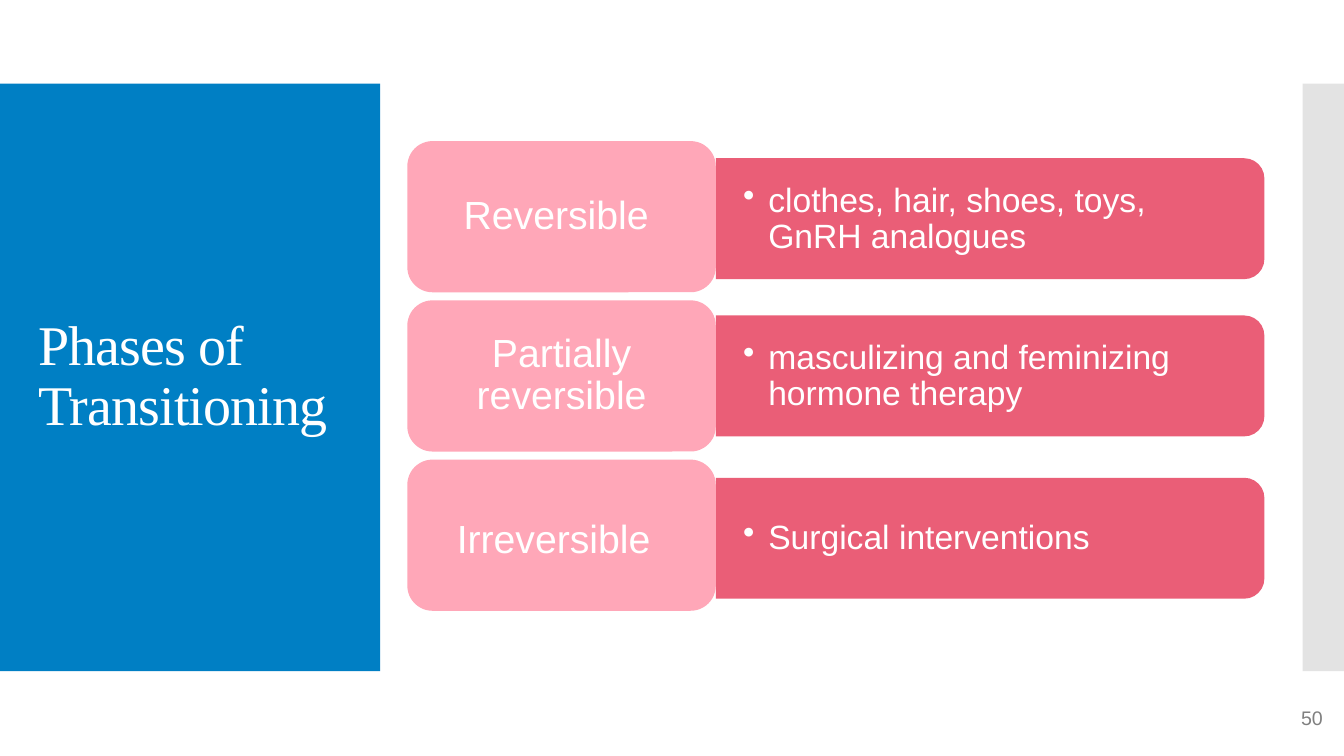
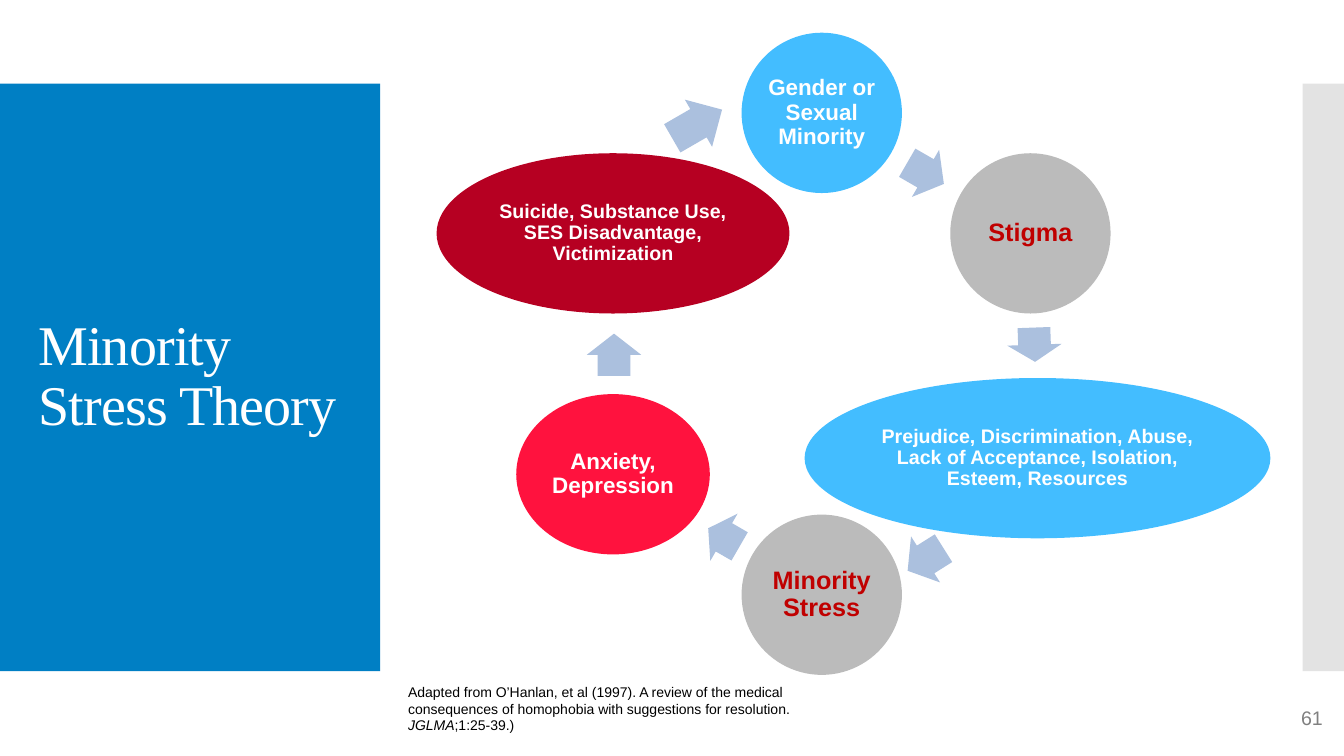
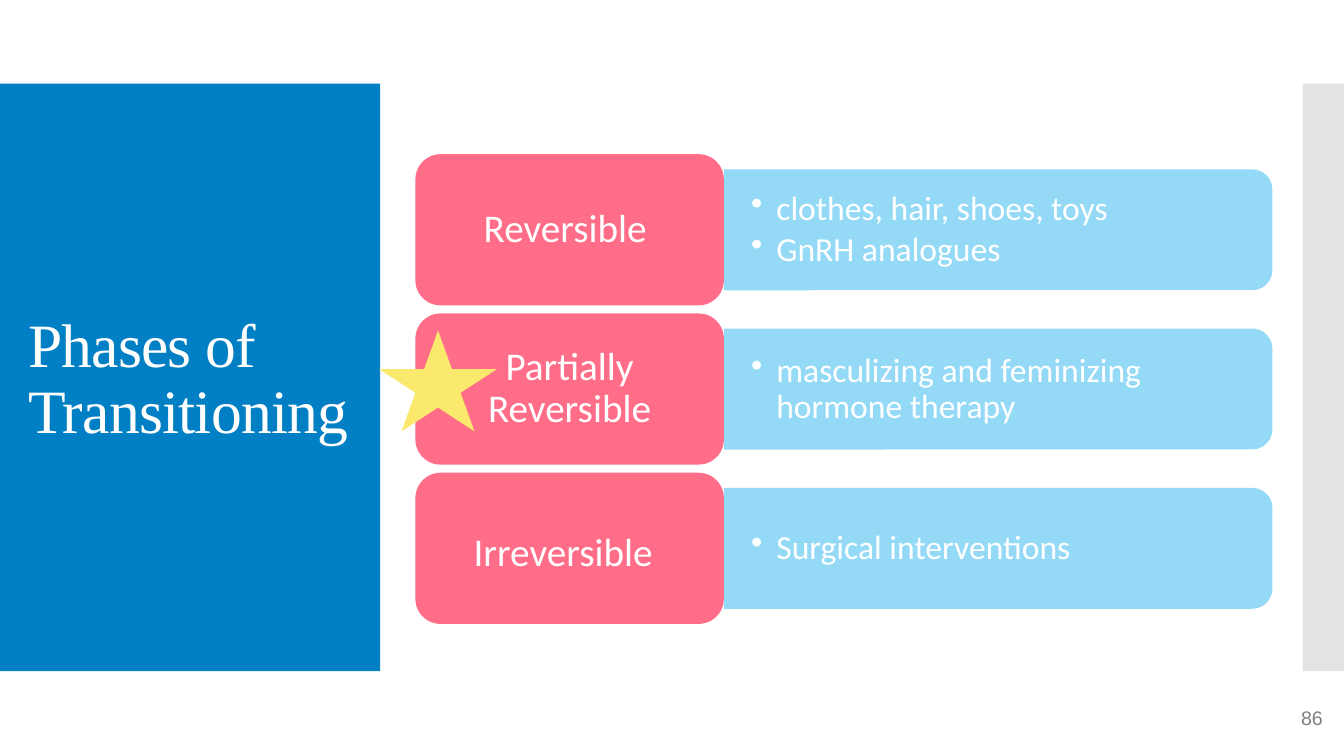
from math import cos, radians, sin

from lxml import etree
from pptx import Presentation
from pptx.dml.color import RGBColor
from pptx.enum.shapes import MSO_SHAPE
from pptx.enum.text import MSO_ANCHOR, MSO_AUTO_SIZE, PP_ALIGN
from pptx.oxml.ns import qn
from pptx.util import Inches, Pt

RECT, ROUNDED = MSO_SHAPE.RECTANGLE, MSO_SHAPE.ROUNDED_RECTANGLE
TAB, OVAL = MSO_SHAPE.ROUND_2_SAME_RECTANGLE, MSO_SHAPE.OVAL
ARROW, STAR = MSO_SHAPE.RIGHT_ARROW, MSO_SHAPE.STAR_5_POINT
LEFT, CENTER, RIGHT = PP_ALIGN.LEFT, PP_ALIGN.CENTER, PP_ALIGN.RIGHT
TOP, MIDDLE = MSO_ANCHOR.TOP, MSO_ANCHOR.MIDDLE
NO_AUTOFIT = MSO_AUTO_SIZE.NONE

COLORS = {
    "white": "FFFFFF", "black": "000000", "number": "808080",
    "band": "007FC4", "edge": "C8C8C8",
    "pink": "FFA7B8", "rose": "E84D69", "coral": "FF6D88", "pale_blue": "89D6F7",
    "star": "FBE96E", "sky": "43BDFF", "gray": "BBBBBB", "dark_red": "C00000",
    "red": "FF123E", "crimson": "B60022", "arrow": "ABC0DE",
}


def add_block(shapes, kind, box, color, alpha=None, rotation=0):
    block = shapes.add_shape(kind, *[Inches(v) for v in box])
    block.shadow.inherit = False
    block.line.fill.background()
    block.fill.solid()
    block.fill.fore_color.rgb = RGBColor.from_string(COLORS[color])
    block.rotation = rotation
    if alpha:
        rgb = block.element.spPr.find(qn("a:solidFill"))[0]
        etree.SubElement(rgb, qn("a:alpha"), val=str(alpha * 1000))
    return block


def write_text(shape, paragraphs, size, color="white", font="Arial", align=LEFT,
               anchor=MIDDLE, insets=(0.1, 0.05), spacing=0.9, bold=False,
               tracking=None, bullet=False):
    """Each paragraph is a list of (text, size or None, italic) runs or plain strings."""
    frame = shape.text_frame
    frame.word_wrap = True
    frame.auto_size = NO_AUTOFIT
    frame.vertical_anchor = anchor
    frame.margin_left = frame.margin_right = Inches(insets[0])
    frame.margin_top = frame.margin_bottom = Inches(insets[1])
    for i, runs in enumerate(paragraphs):
        paragraph = frame.add_paragraph() if i else frame.paragraphs[0]
        paragraph.alignment = align
        paragraph.line_spacing = spacing
        if i < len(paragraphs) - 1:
            paragraph.space_after = Pt(3.6)
        if bullet:
            properties = paragraph._p.get_or_add_pPr()
            properties.set("marL", str(Inches(0.25)))
            properties.set("indent", str(-Inches(0.25)))
            etree.SubElement(properties, qn("a:buChar"), char="•")
        for part in [runs] if isinstance(runs, str) else runs:
            text, run_size, italic = (part, None, False) if isinstance(part, str) else part
            run = paragraph.add_run()
            run.text = text
            run.font.name = font
            run.font.size = Pt(run_size or size)
            run.font.bold = bold
            run.font.italic = italic
            run.font.color.rgb = RGBColor.from_string(COLORS[color])
            if tracking:
                run.font._element.set("spc", str(tracking))


prs = Presentation()
prs.slide_width, prs.slide_height = Inches(13.33), Inches(7.5)
layout = prs.slide_layouts[5]

# Slides with title and number
slides = []
for title_text, title_size, title_box, number in [
    ("Phases of Transitioning", 40, (0.28, 1.23, 3.22, 5.03), "50"),
    ("Minority Stress Theory", 40, (0.28, 1.23, 3.22, 5.03), "61"),
    ("Phases of Transitioning", 44, (0.18, 1.26, 3.58, 5.03), "86"),
]:
    slide = prs.slides.add_slide(layout)
    title = slide.shapes.title
    title.left, title.top, title.width, title.height = [Inches(v) for v in title_box]
    write_text(title, [title_text], title_size, font="Times New Roman", tracking=-60)
    page = slide.shapes.add_textbox(Inches(9.42), Inches(6.95), Inches(3.8), Inches(0.4))
    write_text(page, [number], 14, color="number", align=RIGHT, anchor=TOP, spacing=1)
    slides.append(slide)
phases, stress, phases_again = slides

# Side bands, moved into the layout so that every slide shows them
for i, (left, width, color, alpha) in enumerate([(0, 3.77, "band", None),
                                                 (12.92, 0.42, "edge", 50)]):
    band = add_block(phases.shapes, RECT, (left, 0.83, width, 5.83), color, alpha)
    band.element.nvSpPr.cNvPr.set("id", str(20 + i))
    layout.shapes.element.insert(2 + i, band.element)

# Phase rows: a label on the left, a panel with bullets on the right
LABEL_W, LABEL_H, ROW_PITCH = 3.06, 1.5, 1.58
PANEL_W, PANEL_H = 5.44, 1.2
irreversible = ["Irreversible", (" ", 41, False)]
hormones, surgery = ["masculizing and feminizing hormone therapy"], ["Surgical interventions"]
for slide, left, top, label_color, panel_color, font, rows in [
    (phases, 4.04, 1.4, "pink", "rose", "Arial", [
        ("Reversible ", ["clothes, hair, shoes, toys, GnRH analogues"], 0.02),
        ("Partially reversible", hormones, 0),
        (irreversible, surgery, 0.03)]),
    (phases_again, 4.12, 1.53, "coral", "pale_blue", "Calibri", [
        ("Reversible ", ["clothes, hair, shoes, toys", "GnRH analogues"], 0),
        ("Partially Reversible", hormones, 0),
        (irreversible, surgery, 0)]),
]:
    for i, (phase, examples, panel_shift) in enumerate(rows):
        label_top = top + i * ROW_PITCH
        panel_left = left + LABEL_W
        middle = label_top + LABEL_H / 2 + panel_shift
        # The panel is a tab turned by a quarter, so its width and height swap
        add_block(slide.shapes, TAB,
                  (panel_left + (PANEL_W - PANEL_H) / 2, middle - PANEL_W / 2, PANEL_H, PANEL_W),
                  panel_color, alpha=90, rotation=90)
        bullets = slide.shapes.add_textbox(Inches(panel_left), Inches(middle - 0.54),
                                           Inches(5.38), Inches(1.09))
        write_text(bullets, examples, 24, font=font, insets=(0.27, 0.14), bullet=True)
        label = add_block(slide.shapes, ROUNDED, (left, label_top, LABEL_W, LABEL_H), label_color)
        write_text(label, [phase], 28, font=font, align=CENTER, insets=(0.12, 0.06))

add_block(phases_again.shapes, STAR, (3.76, 3.28, 1.17, 1), "star")

# Stress cycle: ovals every 60 degrees clockwise from the top
CENTER_X, CENTER_Y, RADIUS, OVAL_H = 8.15, 3.51, 2.39, 1.59
for i, (text, width, size, fill, color, shift_x, shift_y) in enumerate([
    ("Gender or Sexual Minority", 1.59, 16, "sky", "white", 0, 0),
    ("Stigma", 1.59, 18, "gray", "dark_red", 0, 0),
    ("Prejudice, Discrimination, Abuse, Lack of Acceptance, Isolation, Esteem, Resources",
     4.62, 14, "sky", "white", 0.07, -0.16),
    ("Minority Stress", 1.59, 18, "gray", "dark_red", 0, 0),
    ("Anxiety, Depression", 1.92, 16, "red", "white", 0, 0),
    ("Suicide, Substance Use, SES Disadvantage, Victimization",
     3.5, 14, "crimson", "white", 0, 0),
]):
    angle = radians(60 * i)
    x = CENTER_X + RADIUS * sin(angle) + shift_x
    y = CENTER_Y - RADIUS * cos(angle) + shift_y
    stage = add_block(stress.shapes, OVAL, (x - width / 2, y - OVAL_H / 2, width, OVAL_H), fill)
    write_text(stage, [text], size, color=color, align=CENTER, insets=(0.02, 0.02), bold=True)

# Arrows between the stages
for left, top, width, rotation in [
    (8.97, 1.45, 0.42, 30), (10.09, 3.15, 0.34, 88), (8.97, 5.28, 0.42, 147.8),
    (7, 5.06, 0.36, 210), (5.88, 3.25, 0.42, 270), (6.63, 0.96, 0.57, 330),
]:
    arrow = add_block(stress.shapes, ARROW, (left, top, width, 0.54), "arrow", rotation=rotation)
    arrow.adjustments[0] = 0.6

# Source of the cycle
citation = stress.shapes.add_textbox(Inches(3.95), Inches(6.73), Inches(4.6), Inches(0.61))
write_text(citation, [[
    "Adapted from O’Hanlan, et al (1997). A review of the medical consequences of "
    "homophobia with suggestions for resolution. ",
    ("JGLMA", None, True),
    ";1:25‐39.)",
]], 10, color="black", anchor=TOP, spacing=1)

prs.save("out.pptx")
